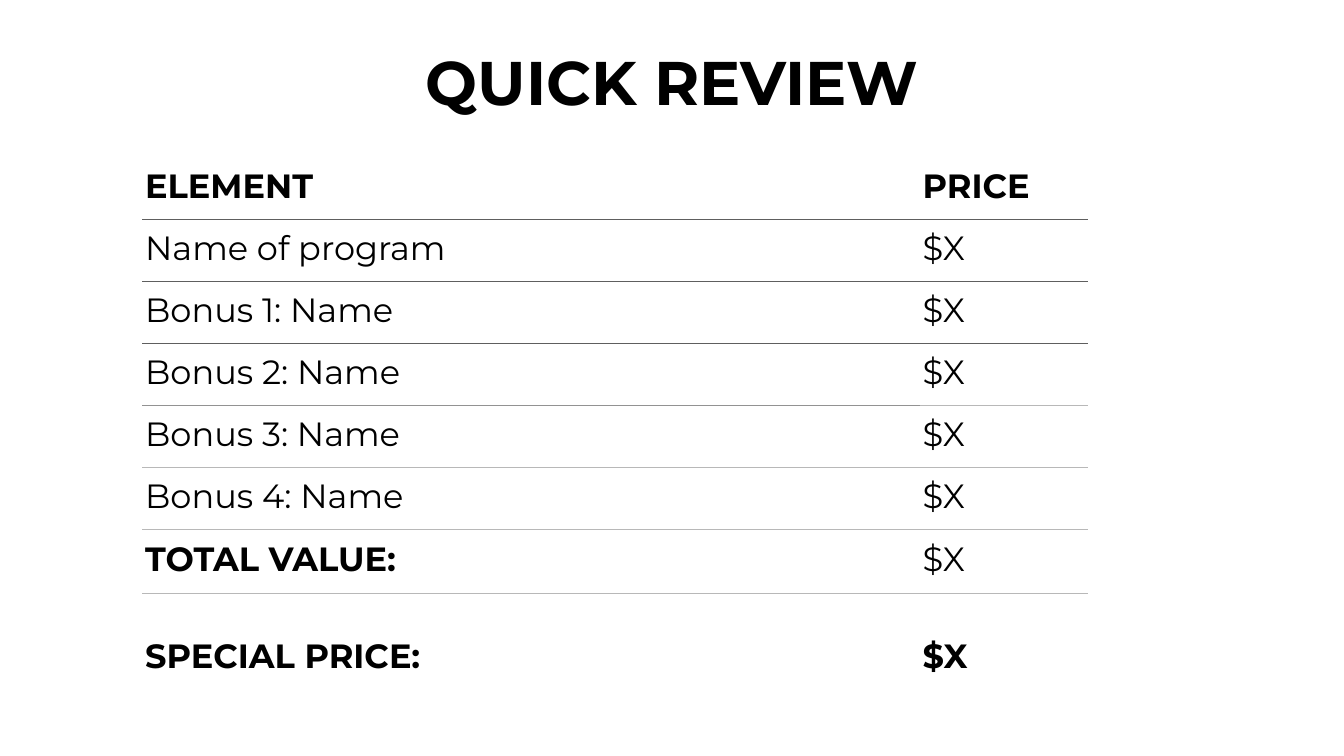
from dataclasses import dataclass

from lxml.etree import SubElement
from pptx import Presentation
from pptx.dml.color import RGBColor
from pptx.enum.text import MSO_ANCHOR, MSO_AUTO_SIZE, PP_ALIGN
from pptx.oxml.ns import qn
from pptx.util import Inches, Pt


@dataclass(frozen=True)
class Theme:
    """Colours, font and type sizes of the slide."""
    font: str = "Montserrat"
    ink: str = "000000"
    paper: str = "FFFFFF"
    dark_rule: str = "5E5E5E"
    mid_rule: str = "929292"
    light_rule: str = "B8B8B8"
    title_size: int = 88
    body_size: int = 48


THEME = Theme()
WIDTH, HEIGHT = 26.67, 15
TITLE_BOX = (7.76, 0.82, 11.14, 1.58)
TABLE_BOX = (2.82, 3.13, 18.77, 11.22)
PRICE_SHARE = 0.178
ROW_UNIT, TOTAL_ROW = 1.23, 1.26
PLAIN_STYLE = "{2D5ABB26-0587-4C30-8999-92F81FD0307C}"

ROWS = [
    ("ELEMENT", "PRICE"),
    ("Name of program", "$X"),
    ("Bonus 1: Name", "$X"),
    ("Bonus 2: Name", "$X"),
    ("Bonus 3: Name", "$X"),
    ("Bonus 4: Name", "$X"),
    ("TOTAL VALUE:", "$X"),
    ("SPECIAL PRICE:", "$X"),
]
BOLD_CELLS = {(0, 0), (0, 1), (6, 0), (7, 0), (7, 1)}
RULES = (
    [(THEME.dark_rule, THEME.dark_rule)] * 3
    + [(THEME.mid_rule, THEME.light_rule)]
    + [(THEME.light_rule, THEME.light_rule)] * 3
)


def write(frame, text, *, size, bold=False, align=PP_ALIGN.LEFT, spacing=1.0):
    """Put one formatted paragraph in a text frame."""
    paragraph = frame.paragraphs[0]
    paragraph.alignment = align
    paragraph.line_spacing = spacing
    run = paragraph.add_run()
    run.text = text
    run.font.name = THEME.font
    run.font.size = Pt(size)
    run.font.bold = bold
    run.font.color.rgb = RGBColor.from_string(THEME.ink)


def rule_cell(cell, edge, colour):
    """Draw a one-point line on an edge of a cell."""
    line = SubElement(cell._tc.get_or_add_tcPr(), qn(f"a:{edge}"), w=str(Pt(1)))
    fill = SubElement(line, qn("a:solidFill"))
    SubElement(fill, qn("a:srgbClr"), val=colour)


def add_title(slide, box):
    """Place the slide heading in the title placeholder."""
    title = slide.shapes.title
    title.left, title.top, title.width, title.height = map(Inches, box)
    frame = title.text_frame
    frame.auto_size = MSO_AUTO_SIZE.NONE
    frame.vertical_anchor = MSO_ANCHOR.TOP
    frame.margin_left = frame.margin_right = Inches(0.05)
    frame.margin_top = frame.margin_bottom = Inches(0.05)
    write(frame, "QUICK REVIEW", size=THEME.title_size, bold=True, align=PP_ALIGN.CENTER)


def fill_cell(cell, row, column):
    """Write, space and rule one cell of the price table."""
    cell.margin_left = cell.margin_right = Inches(0.06)
    cell.margin_top = cell.margin_bottom = Inches(0.06)
    cell.vertical_anchor = MSO_ANCHOR.MIDDLE
    write(cell.text_frame, ROWS[row][column], size=THEME.body_size,
          bold=(row, column) in BOLD_CELLS, spacing=0.8)
    if row > 0:
        rule_cell(cell, "lnT", RULES[row - 1][column])
    if row < len(RULES):
        rule_cell(cell, "lnB", RULES[row][column])
    cell.fill.background()


def add_price_table(slide, box):
    """Place the table of elements and prices in the box."""
    left, top, width, height = box
    table = slide.shapes.add_table(len(ROWS), 2, *map(Inches, box)).table
    table.first_row = table.horz_banding = False
    table._tbl.tblPr.find(qn("a:tableStyleId")).text = PLAIN_STYLE
    for column, share in zip(table.columns, (1 - PRICE_SHARE, PRICE_SHARE)):
        column.width = Inches(width * share)
    row_heights = [ROW_UNIT] * (len(ROWS) - 2) + [TOTAL_ROW]
    row_heights.append(height - sum(row_heights))
    for row, row_height in enumerate(row_heights):
        table.rows[row].height = Inches(row_height)
        for column in range(2):
            fill_cell(table.cell(row, column), row, column)


def main():
    """Build and save the price review slide."""
    deck = Presentation()
    deck.slide_width, deck.slide_height = Inches(WIDTH), Inches(HEIGHT)
    slide = deck.slides.add_slide(deck.slide_layouts.get_by_name("Title Only"))
    slide.background.fill.solid()
    slide.background.fill.fore_color.rgb = RGBColor.from_string(THEME.paper)
    add_price_table(slide, TABLE_BOX)
    add_title(slide, TITLE_BOX)
    deck.save("out.pptx")


if __name__ == "__main__":
    main()
